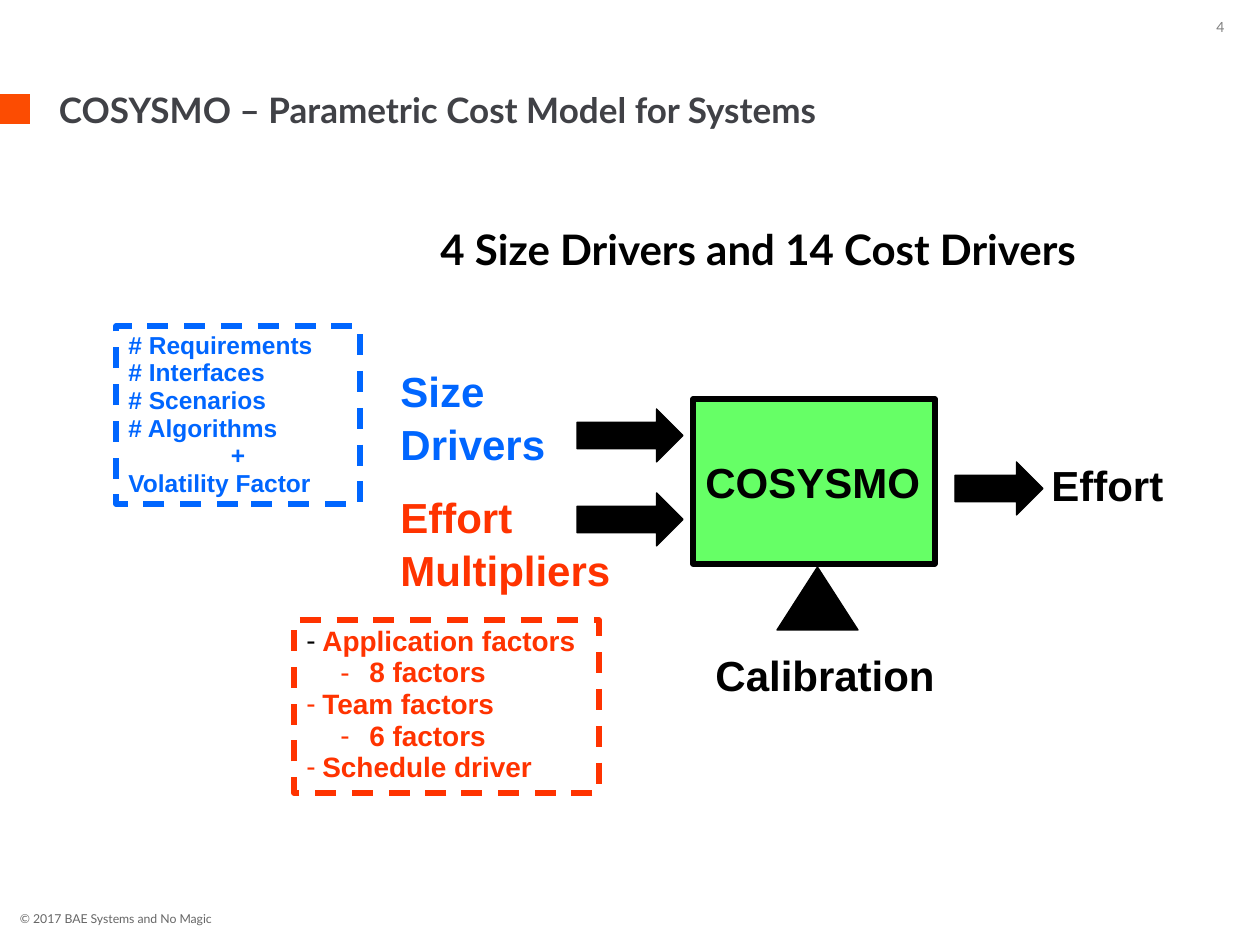
from lxml import etree
from pptx import Presentation
from pptx.dml.color import RGBColor
from pptx.enum.dml import MSO_LINE_DASH_STYLE as Dash
from pptx.enum.shapes import MSO_SHAPE as Shape
from pptx.enum.text import MSO_ANCHOR as Anchor, PP_ALIGN as Align
from pptx.oxml.ns import qn
from pptx.util import Pt

PX = 914400 / 126
BLACK, GREY, ORANGE = "000000", "666666", "FC4C02"
BLUE, RED, GREEN = "0066FF", "FF3300", "66FF66"
FACTORS = [("Application factors", 0), ("8 factors", 1), ("Team factors", 0),
           ("6 factors", 1), ("Schedule driver", 0)]


def px(count):
    return round(count * PX)


def place(shape, bounds):
    shape.left, shape.top, shape.width, shape.height = map(px, bounds)


def color(value):
    return RGBColor.from_string(value)


def write(shape, lines, size, ink, font="Arial", bold=True, anchor=Anchor.TOP,
          align=Align.LEFT, spacing=None, wrap=True, inset=True):
    """Fill a shape with one paragraph per line, all in one style."""
    frame = shape.text_frame
    frame.text = "\n".join(lines)
    frame.word_wrap = wrap
    frame.vertical_anchor = anchor
    if not inset:
        frame.margin_left = frame.margin_top = 0
        frame.margin_right = frame.margin_bottom = 0
    for para in frame.paragraphs:
        para.alignment = align
        para.line_spacing = spacing
        for span in para.runs:
            span.font.name = font
            span.font.size = Pt(size)
            span.font.bold = bold
            span.font.color.rgb = color(ink)
    return frame


def add_text(page, bounds, lines, size, ink, **style):
    box = page.shapes.add_textbox(*map(px, bounds))
    return write(box, lines, size, ink, **style)


def add_block(page, kind, bounds, fill=None, line=None, width=3, dash=None):
    shape = page.shapes.add_shape(kind, *map(px, bounds))
    shape.shadow.inherit = False
    if fill:
        shape.fill.solid()
        shape.fill.fore_color.rgb = color(fill)
    else:
        shape.fill.background()
    if line:
        shape.line.color.rgb = color(line)
        shape.line.width = Pt(width)
        shape.line.dash_style = dash
    else:
        shape.line.fill.background()
    return shape


def add_dashed_list(page, bounds, lines, size, ink):
    box = add_block(page, Shape.RECTANGLE, bounds, line=ink, dash=Dash.DASH)
    return write(box, lines, size, ink, spacing=0.94)


def add_bullet(para, margin, hang, ink):
    props = para._p.get_or_add_pPr()
    props.set("marL", str(px(margin)))
    props.set("indent", str(-px(hang)))
    paint = etree.SubElement(props, qn("a:buClr"))
    etree.SubElement(paint, qn("a:srgbClr"), val=ink)
    etree.SubElement(props, qn("a:buFont"), typeface="Arial")
    etree.SubElement(props, qn("a:buChar"), char="-")


def add_frame(page):
    """Title, its orange marker, the page number and the copyright line."""
    title = page.shapes.title
    place(title, (59, 88, 1152, 42))
    write(title, ["COSYSMO – Parametric Cost Model for Systems"], 20, "404146",
          font="Lato", inset=False)
    add_block(page, Shape.RECTANGLE, (0, 94, 30, 30), fill=ORANGE)
    add_text(page, (1187, 19, 50, 16), ["4"], 8, "808080", font="Lato",
             bold=False, anchor=Anchor.MIDDLE, align=Align.RIGHT)
    add_text(page, (20, 912, 1212, 15), ["© 2017 BAE Systems and No Magic"], 7,
             GREY, font="Lato", bold=False, anchor=Anchor.MIDDLE,
             spacing=Pt(7), inset=False)


def add_model(page):
    """The model box with its arrows, pivot and labels."""
    model = add_block(page, Shape.RECTANGLE, (693, 399, 242, 165), GREEN, BLACK)
    write(model, ["COSYSMO"], 24, BLACK, anchor=Anchor.MIDDLE, wrap=False)

    for bounds in ((577, 409, 106, 53), (577, 493, 106, 53), (955, 462, 88, 53)):
        add_block(page, Shape.RIGHT_ARROW, bounds, BLACK, BLACK, 0.75)
    add_block(page, Shape.ISOSCELES_TRIANGLE, (777, 567, 81, 63), BLACK, BLACK, 0.75)

    labels = [
        ((388, 357, 171, 115), ["Size", "Drivers"], BLUE),
        ((388, 483, 237, 115), ["Effort", "Multipliers"], RED),
        ((1039, 451, 139, 63), ["Effort"], BLACK),
        ((703, 641, 247, 63), ["Calibration"], BLACK),
    ]
    for bounds, lines, ink in labels:
        add_text(page, bounds, lines, 24, ink, spacing=1.05, wrap=False)


def add_drivers(page):
    sizes = add_dashed_list(
        page, (116, 326, 244, 178),
        ["# Requirements", "# Interfaces", "# Scenarios", "# Algorithms", "+",
         "Volatility Factor"], 14, BLUE)
    sizes.paragraphs[4].alignment = Align.CENTER

    factors = add_dashed_list(page, (294, 620, 305, 173),
                              [name for name, level in FACTORS], 16, RED)
    for index, (para, (name, level)) in enumerate(zip(factors.paragraphs, FACTORS)):
        margin, hang = (63, 29) if level else (16, 16)
        para.level = level
        add_bullet(para, margin, hang, RED if index else BLACK)


def main():
    deck = Presentation()
    deck.slide_width, deck.slide_height = px(1260), px(945)
    page = deck.slides.add_slide(deck.slide_layouts[5])
    add_frame(page)
    add_model(page)
    add_drivers(page)
    add_text(page, (428, 229, 750, 50), ["4 Size Drivers and 14 Cost Drivers"],
             24, BLACK, font="Lato", spacing=0.75)
    deck.save("out.pptx")


if __name__ == "__main__":
    main()
